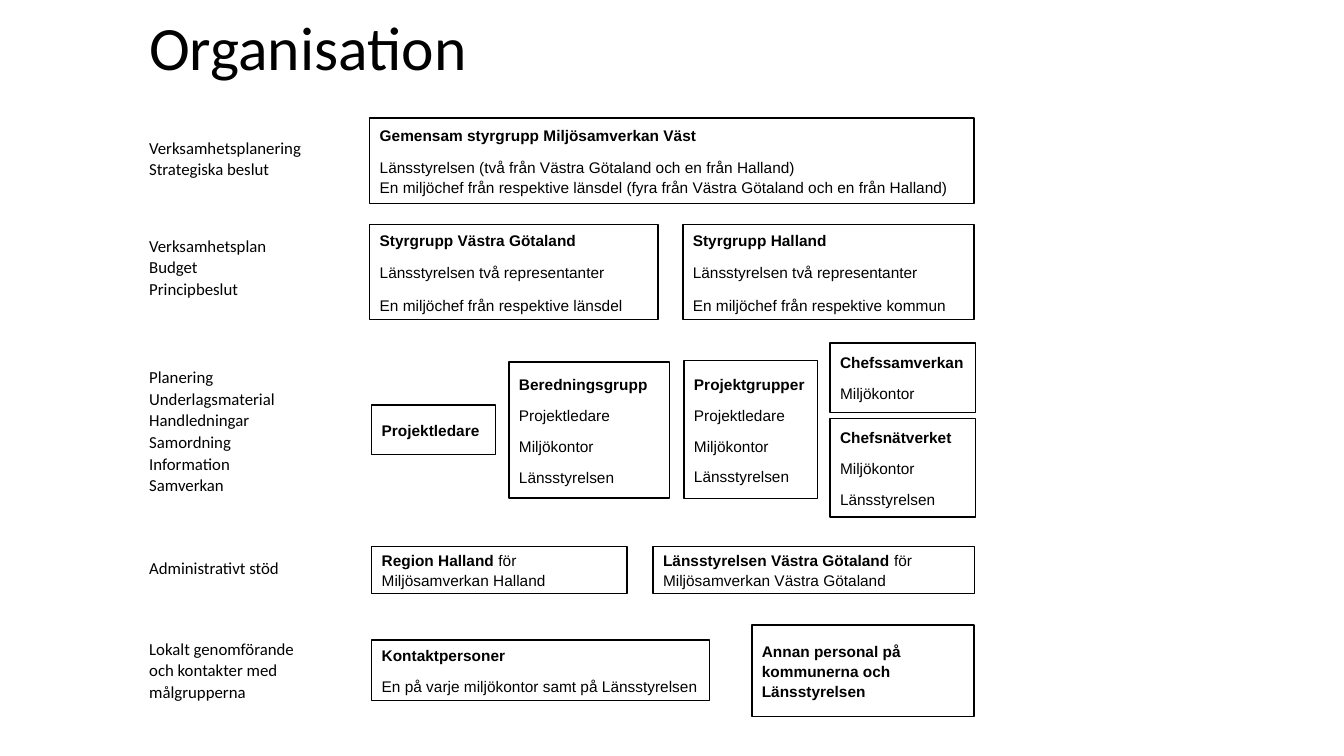
"""Build the organisation slide with row labels and boxes for each group."""
from lxml.etree import SubElement
from pptx import Presentation
from pptx.dml.color import RGBColor
from pptx.enum.shapes import MSO_SHAPE
from pptx.enum.text import MSO_ANCHOR, MSO_AUTO_SIZE, PP_ALIGN
from pptx.oxml.ns import qn
from pptx.util import Cm, Pt

BLACK = RGBColor(0, 0, 0)
WHITE = RGBColor(255, 255, 255)
LABEL_LEFT = 3.51


def write(paragraph, text, font="Arial", size=11, bold=False, spacing=1.07, before=None, after=8):
    """Add text to a paragraph, with a line break at each newline."""
    paragraph.alignment = PP_ALIGN.LEFT
    paragraph.line_spacing = spacing
    paragraph.space_after = Pt(after)
    if before:
        paragraph.space_before = Pt(before)
    for number, line in enumerate(text.split("\n")):
        if number:
            paragraph.add_line_break()
            SubElement(paragraph._p[-1], qn("a:rPr"), sz=str(size * 100))
        span = paragraph.add_run()
        span.text = line
        span.font.name = font
        span.font.size = Pt(size)
        span.font.bold = bold
        span.font.color.rgb = BLACK


def add_box(page, kind, place, anchor):
    """Add a white shape without shadow, given left, top, width and height in cm."""
    box = page.shapes.add_shape(kind, *[Cm(length) for length in place])
    box.shadow.inherit = False
    box.fill.solid()
    box.fill.fore_color.rgb = WHITE
    box.line.fill.background()
    box.text_frame.word_wrap = True
    box.text_frame.vertical_anchor = anchor
    return box


deck = Presentation()
deck.slide_width = Cm(33.87)
deck.slide_height = Cm(19.05)
page = deck.slides.add_slide(deck.slide_layouts[6])

title = page.shapes.add_textbox(Cm(LABEL_LEFT), Cm(0.05), Cm(28.3), Cm(2.46))
title.text_frame.word_wrap = True
title.text_frame.vertical_anchor = MSO_ANCHOR.MIDDLE
write(title.text_frame.paragraphs[0], "Organisation", font="Calibri", size=44, spacing=0.9, after=0)

row_labels = [
    (3.3, 1.35, "Verksamhetsplanering\nStrategiska beslut"),
    (5.77, 1.88, "Verksamhetsplan\nBudget\nPrincipbeslut"),
    (9.09, 3.48, "Planering\nUnderlagsmaterial\nHandledningar\nSamordning\nInformation\nSamverkan"),
    (13.89, 0.97, "Administrativt stöd"),
    (15.93, 1.93, "Lokalt genomförande\noch kontakter med\nmålgrupperna"),
]
for top, height, text in row_labels:
    label = add_box(page, MSO_SHAPE.RECTANGLE, (LABEL_LEFT, top, 6.65, height), MSO_ANCHOR.TOP)
    write(label.text_frame.paragraphs[0], text, font="Calibri", size=12)

steering_groups = [
    ((9.32, 2.97, 15.23, 2.16), "Gemensam styrgrupp Miljösamverkan Väst", "",
     ["Länsstyrelsen (två från Västra Götaland och en från Halland)\n"
      "En miljöchef från respektive länsdel (fyra från Västra Götaland och en från Halland)"]),
    ((9.32, 5.66, 7.26, 2.39), "Styrgrupp Västra Götaland", "",
     ["Länsstyrelsen två representanter", "En miljöchef från respektive länsdel"]),
    ((17.21, 5.66, 7.34, 2.39), "Styrgrupp Halland", "",
     ["Länsstyrelsen två representanter", "En miljöchef från respektive kommun"]),
]
working_groups = [
    ((9.37, 10.21, 3.12, 1.24), "Projektledare", "", []),
    ((12.83, 9.12, 4.04, 3.43), "Beredningsgrupp", "",
     ["Projektledare", "Miljökontor", "Länsstyrelsen"]),
    ((20.92, 8.64, 3.66, 1.75), "Chefssamverkan", "", ["Miljökontor"]),
    ((20.92, 10.54, 3.66, 2.49), "Chefsnätverket", "", ["Miljökontor", "Länsstyrelsen"]),
    ((17.24, 9.09, 3.36, 3.48), "Projektgrupper", "",
     ["Projektledare", "Miljökontor", "Länsstyrelsen"]),
    ((9.37, 13.77, 6.43, 1.19), "Region Halland ", "för Miljösamverkan Halland", []),
    ((16.46, 13.77, 8.1, 1.19), "Länsstyrelsen Västra Götaland ",
     "för Miljösamverkan Västra Götaland", []),
    ((9.37, 16.13, 8.51, 1.52), "Kontaktpersoner", "",
     ["En på varje miljökontor samt på Länsstyrelsen"]),
    ((18.95, 15.75, 5.6, 2.31), "Annan personal på kommunerna och Länsstyrelsen", "", []),
]
growing = ("Styrgrupp Västra Götaland", "Styrgrupp Halland", "Kontaktpersoner")
for groups, before in ((steering_groups, 0.9), (working_groups, None)):
    for place, heading, tail, members in groups:
        box = add_box(page, MSO_SHAPE.FLOWCHART_PROCESS, place, MSO_ANCHOR.MIDDLE)
        box.line.color.rgb = BLACK
        box.line.width = Pt(1)
        if heading.startswith("Annan personal"):
            box.fill.background()
        else:
            white = box._element.spPr.find(qn("a:solidFill"))[0]
            SubElement(white, qn("a:alpha"), val="50000")
        frame = box.text_frame
        if heading in growing:
            frame.auto_size = MSO_AUTO_SIZE.SHAPE_TO_FIT_TEXT
        write(frame.paragraphs[0], heading, bold=True)
        if tail:
            write(frame.paragraphs[0], tail)
        for member in members:
            write(frame.add_paragraph(), member, before=before)

deck.save("out.pptx")
